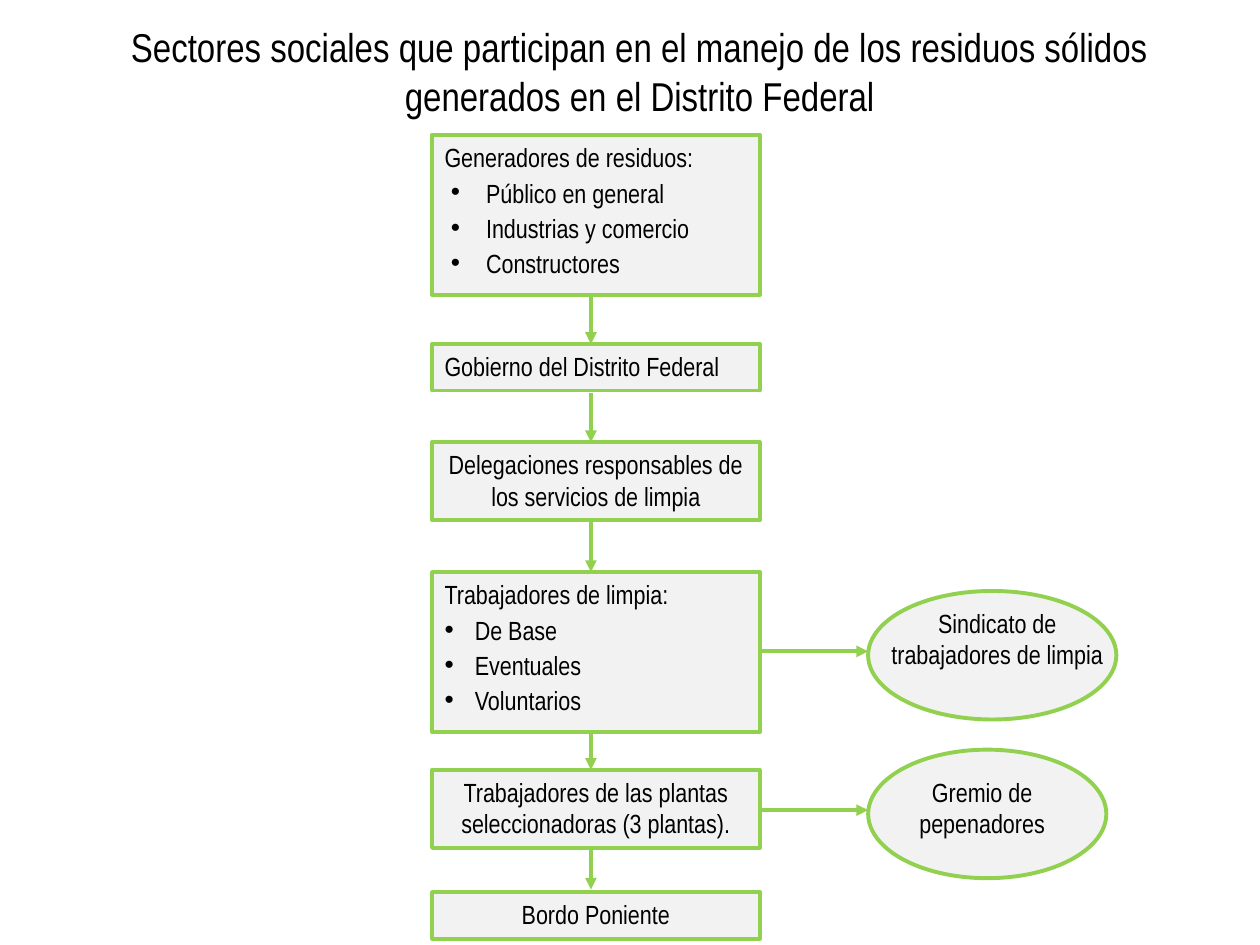
from dataclasses import dataclass

from lxml import etree
from pptx import Presentation
from pptx.dml.color import RGBColor
from pptx.enum.shapes import MSO_CONNECTOR, MSO_SHAPE
from pptx.enum.text import MSO_ANCHOR, MSO_AUTO_SIZE, PP_ALIGN
from pptx.oxml.ns import qn
from pptx.slide import Slide
from pptx.util import Inches, Pt

RECTANGLE, ELLIPSE = MSO_SHAPE.RECTANGLE, MSO_SHAPE.OVAL
STRAIGHT = MSO_CONNECTOR.STRAIGHT
LEFT, CENTER = PP_ALIGN.LEFT, PP_ALIGN.CENTER
TOP = MSO_ANCHOR.TOP
NO_AUTOFIT = MSO_AUTO_SIZE.NONE

BLACK = RGBColor(0x00, 0x00, 0x00)
GREEN = RGBColor(0x92, 0xD0, 0x50)
PALE_GRAY = RGBColor(0xF2, 0xF2, 0xF2)

STEP_LEFT, STEP_WIDTH = 3.43, 2.6
ARROW_X = 4.69
UNION_LEFT = 6.89


@dataclass
class FlowSlide:
    slide: Slide
    font_name: str = "Arial Narrow"
    title_size: float = 23
    body_size: float = 15
    line_width: float = 2.25

    def add_text(self, paragraph, text, size, align):
        paragraph.alignment = align
        run = paragraph.add_run()
        run.text = text
        run.font.name = self.font_name
        run.font.size = Pt(size)
        run.font.color.rgb = BLACK

    def prepare(self, frame):
        frame.word_wrap = True
        frame.auto_size = NO_AUTOFIT
        frame.vertical_anchor = TOP

    def title(self, text, left, top, width, height):
        heading = self.slide.shapes.title
        heading.left, heading.top = Inches(left), Inches(top)
        heading.width, heading.height = Inches(width), Inches(height)
        self.prepare(heading.text_frame)
        self.add_text(heading.text_frame.paragraphs[0], text, self.title_size, CENTER)

    def outline(self, kind, left, top, width, height):
        shape = self.slide.shapes.add_shape(
            kind, Inches(left), Inches(top), Inches(width), Inches(height))
        shape.shadow.inherit = False
        shape.fill.solid()
        shape.fill.fore_color.rgb = PALE_GRAY
        shape.line.color.rgb = GREEN
        shape.line.width = Pt(self.line_width)
        return shape

    def bullet(self, frame, text, margin, hanging):
        paragraph = frame.add_paragraph()
        properties = paragraph._p.get_or_add_pPr()
        properties.set("marL", str(Inches(margin)))
        properties.set("indent", str(-Inches(hanging)))
        etree.SubElement(properties, qn("a:buFont")).set("typeface", "Arial")
        etree.SubElement(properties, qn("a:buChar")).set("char", "•")
        paragraph.line_spacing = 0.7
        paragraph.space_before = Pt(self.body_size / 2)
        self.add_text(paragraph, text, self.body_size, LEFT)

    def step(self, text, top, height, align, items=(), margin=0, hanging=0):
        frame = self.outline(RECTANGLE, STEP_LEFT, top, STEP_WIDTH, height).text_frame
        self.prepare(frame)
        self.add_text(frame.paragraphs[0], text, self.body_size, align)
        for item in items:
            self.bullet(frame, item, margin, hanging)

    def label(self, text, left, top, width, height):
        frame = self.slide.shapes.add_textbox(
            Inches(left), Inches(top), Inches(width), Inches(height)).text_frame
        self.prepare(frame)
        self.add_text(frame.paragraphs[0], text, self.body_size, CENTER)

    def arrow(self, x1, y1, x2, y2):
        connector = self.slide.shapes.add_connector(
            STRAIGHT, Inches(x1), Inches(y1), Inches(x2), Inches(y2))
        connector.line.color.rgb = GREEN
        connector.line.width = Pt(self.line_width)
        properties = connector._element.spPr
        etree.SubElement(properties.find(qn("a:ln")), qn("a:tailEnd")).set("type", "triangle")
        etree.SubElement(properties, qn("a:effectLst"))


def main():
    deck = Presentation()
    deck.slide_width, deck.slide_height = Inches(10), Inches(7.5)
    flow = FlowSlide(deck.slides.add_slide(deck.slide_layouts[5]))

    flow.title("Sectores sociales que participan en el manejo de los residuos sólidos "
               "generados en el Distrito Federal", 0.59, 0.13, 8.98, 0.79)

    generators = ("Público en general", "Industrias y comercio", "Constructores")
    workers = ("De Base", "Eventuales", "Voluntarios")
    flow.step("Generadores de residuos:", 1.07, 1.27, LEFT, generators, 0.33, 0.28)
    flow.step("Gobierno del Distrito Federal", 2.73, 0.37, LEFT)
    flow.step("Delegaciones responsables de los servicios de limpia", 3.51, 0.62, CENTER)
    flow.step("Trabajadores de limpia:", 4.54, 1.27, LEFT, workers, 0.24, 0.24)
    flow.step("Trabajadores de las plantas seleccionadoras (3 plantas).", 6.11, 0.62, CENTER)
    flow.step("Bordo Poniente", 7.08, 0.37, CENTER)

    flow.outline(ELLIPSE, UNION_LEFT, 4.69, 1.97, 1.02)
    flow.label("Sindicato de trabajadores de limpia", UNION_LEFT, 4.77, 2.05, 0.6)
    flow.outline(ELLIPSE, UNION_LEFT, 5.95, 1.89, 1.02)
    flow.label("Gremio de pepenadores", 6.97, 6.11, 1.65, 0.6)

    for start, end in ((2.33, 2.73), (3.12, 3.51), (4.14, 4.54), (5.8, 6.11), (6.74, 7.06)):
        flow.arrow(ARROW_X, start, ARROW_X, end)
    for y in (5.17, 6.43):
        flow.arrow(STEP_LEFT + STEP_WIDTH, y, UNION_LEFT, y)

    deck.save("out.pptx")


if __name__ == "__main__":
    main()
